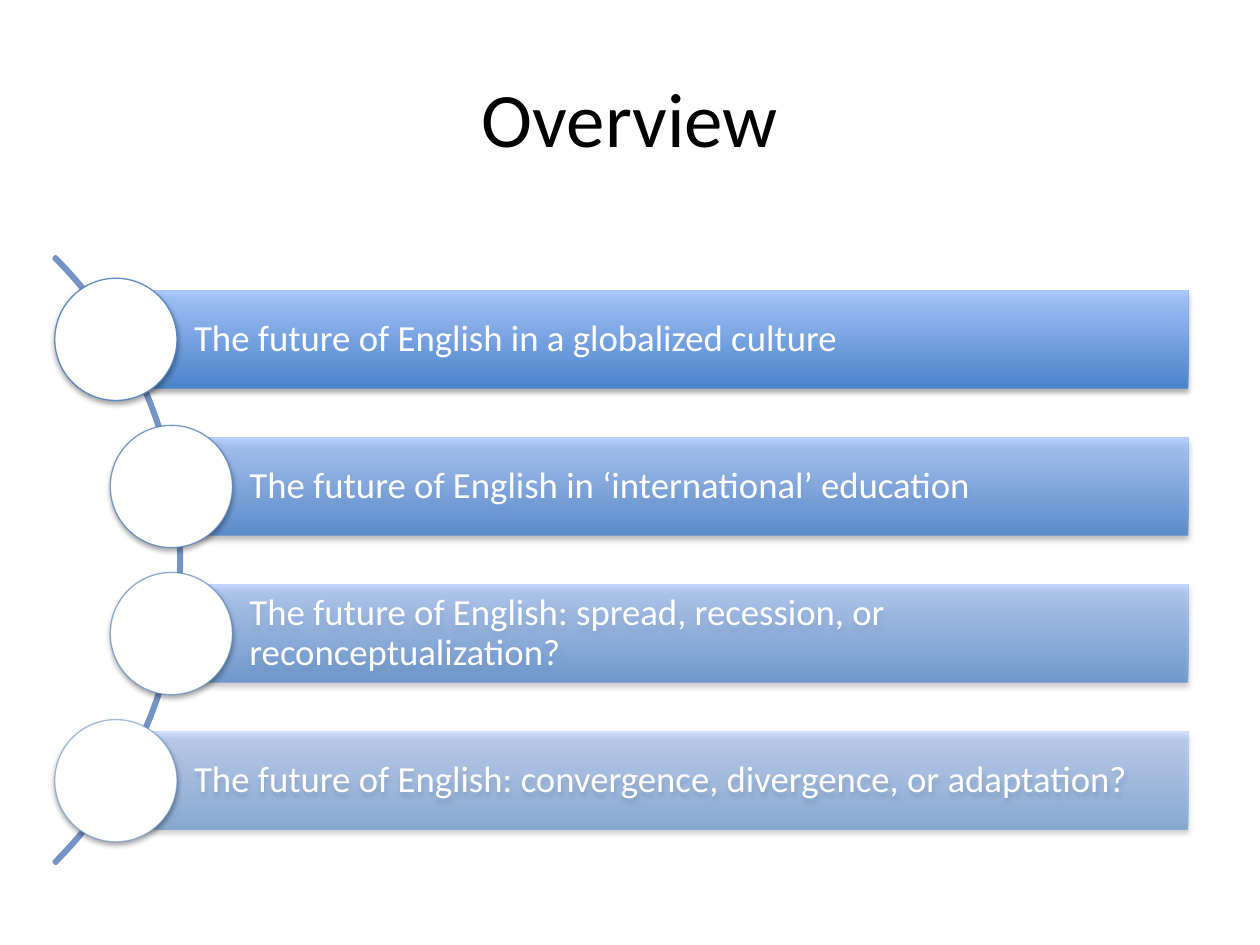
from dataclasses import dataclass

from lxml.etree import SubElement
from pptx import Presentation
from pptx.dml.color import RGBColor
from pptx.enum.shapes import MSO_SHAPE as Shape
from pptx.enum.text import MSO_ANCHOR as Anchor, PP_ALIGN as Align
from pptx.oxml.ns import qn
from pptx.util import Inches, Pt


@dataclass(frozen=True)
class Theme:
    font: str = "Calibri"
    title_size: int = 44
    item_size: int = 21
    title_color: str = "000000"
    item_color: str = "FFFFFF"
    bar_bottom: str = "3F7FCE"
    bar_top: str = "A4C4FF"
    circle_fill: str = "FFFFFF"
    circle_line: str = "4F81BD"
    arc: str = "7394C5"
    shadow: str = "000000"


THEME = Theme()
ITEMS = [
    "The future of English in a globalized culture",
    "The future of English in ‘international’ education",
    "The future of English: spread, recession, or reconceptualization?",
    "The future of English: convergence, divergence, or adaptation?",
]
OPACITIES = [90, 77, 63, 50]
CIRCLE_CENTERS = [0.92, 1.36, 1.36, 0.92]


def rgb(color):
    return RGBColor.from_string(color)


def write_text(shape, text, *, size, color, align=Align.LEFT, line_spacing=None,
               margins=None):
    frame = shape.text_frame
    frame.word_wrap = True
    frame.vertical_anchor = Anchor.MIDDLE
    if margins:
        (frame.margin_left, frame.margin_top,
         frame.margin_right, frame.margin_bottom) = map(Inches, margins)
    paragraph = frame.paragraphs[0]
    paragraph.alignment = align
    paragraph.line_spacing = line_spacing
    run = paragraph.add_run()
    run.text = text
    run.font.name = THEME.font
    run.font.size = Pt(size)
    run.font.color.rgb = rgb(color)


def set_opacity(element, percent):
    """Apply the opacity to every RGB colour inside the element."""
    for color in element.iter(qn("a:srgbClr")):
        SubElement(color, qn("a:alpha"), val=str(percent * 1000))


def add_soft_shadow(shape):
    effects = shape._element.spPr.find(qn("a:effectLst"))
    shadow = SubElement(effects, qn("a:outerShdw"), blurRad=str(Pt(3.1)),
                        dist=str(Pt(1.8)), dir="5400000", rotWithShape="0")
    SubElement(shadow, qn("a:srgbClr"), val=THEME.shadow)
    set_opacity(shadow, 35)


def add_plain_shape(slide, kind, left, top, width, height):
    shape = slide.shapes.add_shape(
        kind, Inches(left), Inches(top), Inches(width), Inches(height))
    shape.shadow.inherit = False
    return shape


def add_title(slide, text, left, top, width, height):
    title = slide.shapes.title
    title.left, title.top = Inches(left), Inches(top)
    title.width, title.height = Inches(width), Inches(height)
    write_text(title, text, size=THEME.title_size, color=THEME.title_color,
               align=Align.CENTER)


def add_arc(slide, left, top, size):
    arc = add_plain_shape(slide, Shape.BLOCK_ARC, left, top, size, size)
    for index, value in enumerate((189, 27, 0.003)):
        arc.adjustments[index] = value
    arc.fill.background()
    arc.line.color.rgb = rgb(THEME.arc)
    arc.line.width = Pt(2)


def add_bar(slide, text, opacity, left, top, width, height):
    bar = add_plain_shape(slide, Shape.RECTANGLE, left, top, width, height)
    bar.fill.gradient()
    bar.fill.gradient_angle = 90
    for position, (stop, color) in enumerate(
            zip(bar.fill.gradient_stops, (THEME.bar_bottom, THEME.bar_top))):
        stop.position = position
        stop.color.rgb = rgb(color)
    bar.line.fill.background()
    set_opacity(bar._element.spPr, opacity)
    add_soft_shadow(bar)
    write_text(bar, text, size=THEME.item_size, color=THEME.item_color,
               line_spacing=0.9, margins=(0.62, 0.06, 0.06, 0.06))


def add_circle(slide, opacity, left, top, size):
    circle = add_plain_shape(slide, Shape.OVAL, left, top, size, size)
    circle.fill.solid()
    circle.fill.fore_color.rgb = rgb(THEME.circle_fill)
    circle.line.color.rgb = rgb(THEME.circle_line)
    circle.line.width = Pt(0.75)
    set_opacity(circle._element.spPr.find(qn("a:ln")), opacity)
    add_soft_shadow(circle)


def add_curved_list(slide, top, right, height):
    """Spread the items evenly over the height, along an arc."""
    bar_height, circle_size, arc_size = 0.78, 0.97, 6.81
    pitch = height / len(ITEMS)
    add_arc(slide, -5.37, top + (height - arc_size) / 2, arc_size)
    for index, (text, opacity, center_x) in enumerate(
            zip(ITEMS, OPACITIES, CIRCLE_CENTERS)):
        center_y = top + (index + 0.5) * pitch
        add_bar(slide, text, opacity, center_x, center_y - bar_height / 2,
                right - center_x, bar_height)
        add_circle(slide, opacity, center_x - circle_size / 2,
                   center_y - circle_size / 2, circle_size)


def main():
    presentation = Presentation()
    presentation.slide_width = Inches(10)
    presentation.slide_height = Inches(7.5)
    slide = presentation.slides.add_slide(presentation.slide_layouts[5])
    add_title(slide, "Overview", 0.5, 0.3, 9, 1.25)
    add_curved_list(slide, top=2.11, right=9.43, height=4.67)
    presentation.save("out.pptx")


if __name__ == "__main__":
    main()
